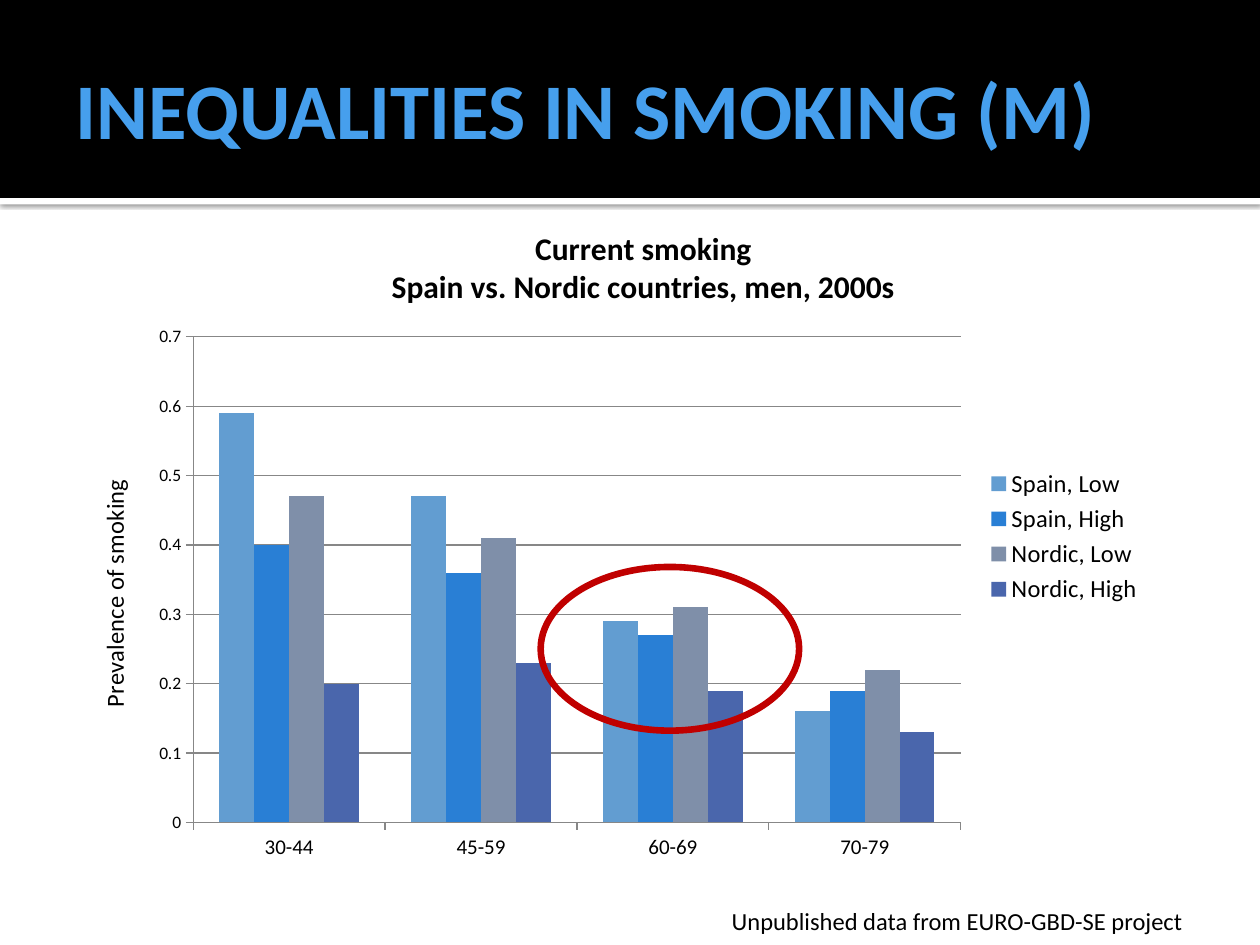
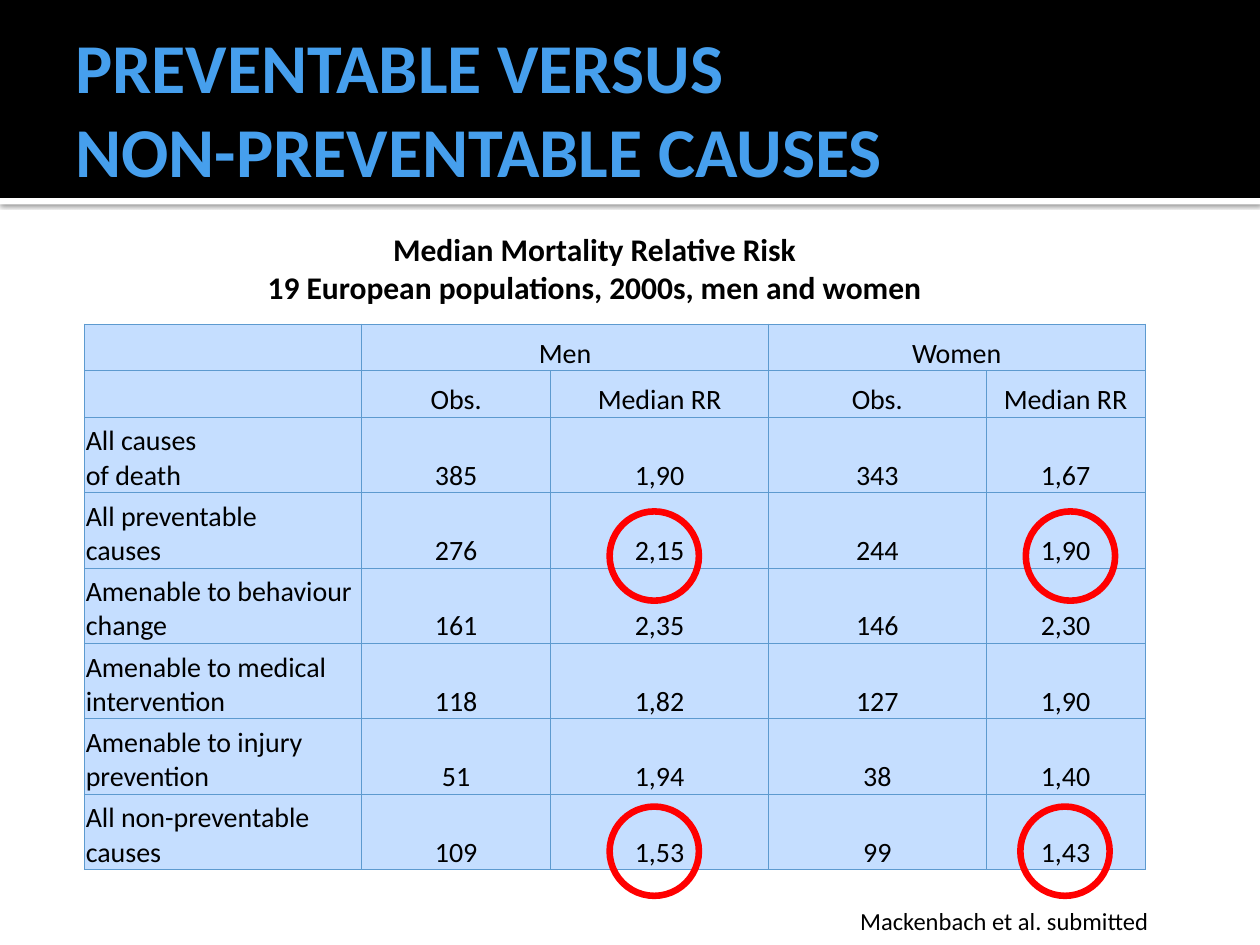
from dataclasses import dataclass

import pptx
import pptx.chart.data
import pptx.dml.color
import pptx.enum.chart
import pptx.enum.shapes
import pptx.enum.text
import pptx.oxml
import pptx.oxml.ns
import pptx.util
from lxml import etree

Cm = pptx.util.Cm
Pt = pptx.util.Pt
RGB = pptx.dml.color.RGBColor.from_string
ALIGN = pptx.enum.text.PP_ALIGN
ANCHOR = pptx.enum.text.MSO_ANCHOR
SHAPE = pptx.enum.shapes.MSO_SHAPE
CHART = pptx.enum.chart
qn = pptx.oxml.ns.qn
NS = pptx.oxml.ns.nsdecls


@dataclass(frozen=True)
class Theme:
    font: str = "Calibri"
    black: str = "000000"
    white: str = "FFFFFF"
    title: str = "469FED"
    grid: str = "878787"
    cell: str = "C5DEFF"
    border: str = "5D9ACF"
    dark_red: str = "C00000"
    red: str = "FF0000"
    heading_pt: int = 18
    table_pt: int = 16
    note_pt: int = 14
    category_pt: int = 12
    chart_pt: int = 10


@dataclass(frozen=True)
class Box:
    left: float
    top: float
    width: float
    height: float

    def emu(self) -> tuple:
        return Cm(self.left), Cm(self.top), Cm(self.width), Cm(self.height)


@dataclass(frozen=True)
class Label:
    text: str
    box: Box
    size: int
    color: str
    bold: bool = False
    align: ALIGN = ALIGN.LEFT
    anchor: ANCHOR = ANCHOR.TOP


@dataclass(frozen=True)
class Ring:
    box: Box
    color: str


@dataclass(frozen=True)
class Series:
    name: str
    values: tuple
    color: str


T = Theme()
TITLE_BOX = Box(1.27, 0.43, 22.86, 3.48)
BAND = Box(0, 0, 25.4, 3.99)
STRIP = Box(0, 3.99, 25.4, 0.13)

AGES = ("30-44", "45-59", "60-69", "70-79")
SMOKING = (
    Series("Spain, Low", (0.59, 0.47, 0.29, 0.16), "629DD1"),
    Series("Spain, High", (0.4, 0.36, 0.27, 0.19), "297FD5"),
    Series("Nordic, Low", (0.47, 0.41, 0.31, 0.22), "7F8FA9"),
    Series("Nordic, High", (0.2, 0.23, 0.19, 0.13), "4A66AC"),
)

COLUMNS = (5.59, 3.81, 4.39, 4.39, 3.2)
HEADER_ROWS = 2
HEADER_HEIGHT, BODY_HEIGHT = 0.94, 1.52
RISKS = (
    ("", "Men", "", "Women", ""),
    ("", "Obs.", "Median RR", "Obs.", "Median RR"),
    ("All causes\nof death", "385", "1,90", "343", "1,67"),
    ("All preventable\vcauses", "276", "2,15", "244", "1,90"),
    ("Amenable to behaviour change", "161", "2,35", "146", "2,30"),
    ("Amenable to medical intervention", "118", "1,82", "127", "1,90"),
    ("Amenable to injury prevention", "51", "1,94", "38", "1,40"),
    ("All non-preventable causes", "109", "1,53", "99", "1,43"),
)
RING_SIZE = 1.8
RING_SPOTS = ((12.29, 10.31), (12.29, 16.26), (20.68, 10.31), (20.57, 16.26))


def style_font(font, size: int, color: str = T.black, bold: bool = False) -> None:
    font.name = T.font
    font.size = Pt(size)
    font.bold = bold
    font.color.rgb = RGB(color)


def style_runs(tf, size: int, color: str = T.black, bold: bool = False,
               align: ALIGN = ALIGN.LEFT) -> None:
    for p in tf.paragraphs:
        p.alignment = align
        for r in p.runs:
            style_font(r.font, size, color, bold)


def add_label(s, label: Label) -> None:
    tf = s.shapes.add_textbox(*label.box.emu()).text_frame
    tf.word_wrap = True
    tf.vertical_anchor = label.anchor
    tf.text = label.text
    style_runs(tf, label.size, label.color, label.bold, label.align)


def add_bar(s, box: Box, color: str):
    sp = s.shapes.add_shape(SHAPE.RECTANGLE, *box.emu())
    sp.shadow.inherit = False
    sp.fill.solid()
    sp.fill.fore_color.rgb = RGB(color)
    sp.line.fill.background()
    return sp


def add_ring(s, ring: Ring) -> None:
    sp = s.shapes.add_shape(SHAPE.OVAL, *ring.box.emu())
    sp.shadow.inherit = False
    sp.fill.background()
    sp.line.color.rgb = RGB(ring.color)
    sp.line.width = Pt(3.78)


def add_slide(prs, title: str, size: int):
    s = prs.slides.add_slide(prs.slide_layouts[6])
    strip = add_bar(s, STRIP, T.white)
    effects = strip._element.spPr.find(qn("a:effectLst"))
    effects.append(pptx.oxml.parse_xml(
        f'<a:outerShdw {NS("a")} blurRad="{Pt(2.5)}" dist="{Pt(0.8)}" dir="5400000" '
        f'algn="tl" rotWithShape="0"><a:srgbClr val="{T.black}">'
        '<a:alpha val="60000"/></a:srgbClr></a:outerShdw>'))
    add_bar(s, BAND, T.black)
    add_label(s, Label(title, TITLE_BOX, size, T.title, True, anchor=ANCHOR.MIDDLE))
    return s


def place(element, inner: bool = False, **fractions: float) -> None:
    for old in element.findall(qn("c:layout")):
        element.remove(old)
    layout = etree.Element(qn("c:layout"))
    manual = etree.SubElement(layout, qn("c:manualLayout"))
    if inner:
        etree.SubElement(manual, qn("c:layoutTarget")).set("val", "inner")
    for key in ("x", "y"):
        etree.SubElement(manual, qn(f"c:{key}Mode")).set("val", "edge")
    for key, value in fractions.items():
        etree.SubElement(manual, qn(f"c:{key}")).set("val", str(value))
    text = element.find(qn("c:tx"))
    element.insert(0 if text is None else element.index(text) + 1, layout)


def add_smoking_chart(s, box: Box) -> None:
    data = pptx.chart.data.CategoryChartData()
    data.categories = AGES
    for series in SMOKING:
        data.add_series(series.name, series.values)
    chart = s.shapes.add_chart(
        CHART.XL_CHART_TYPE.COLUMN_CLUSTERED, *box.emu(), data).chart
    style_font(chart.font, T.chart_pt)

    tf = chart.chart_title.text_frame
    tf.text = "Current smoking\nSpain vs. Nordic countries, men, 2000s"
    style_runs(tf, T.heading_pt, bold=True, align=ALIGN.CENTER)
    chart.chart_title.include_in_layout = False
    place(chart.chart_title._element, x=0.29, y=0.03)

    plot = chart.plots[0]
    plot.gap_width = 150
    plot.overlap = 0
    plot.vary_by_categories = False
    for drawn, series in zip(plot.series, SMOKING):
        drawn.format.fill.solid()
        drawn.format.fill.fore_color.rgb = RGB(series.color)
    place(chart._chartSpace.chart.plotArea, True, x=0.11, y=0.2, w=0.71, h=0.73)

    ages, prevalence = chart.category_axis, chart.value_axis
    for axis, size in ((ages, T.category_pt), (prevalence, T.chart_pt)):
        style_font(axis.tick_labels.font, size)
        axis.major_tick_mark = CHART.XL_TICK_MARK.OUTSIDE
        axis.format.line.color.rgb = RGB(T.grid)
        axis.format.line.width = Pt(0.75)
    prevalence.minimum_scale, prevalence.maximum_scale = 0, 0.7
    prevalence.major_unit = 0.1
    prevalence.major_gridlines.format.line.color.rgb = RGB(T.grid)
    prevalence.major_gridlines.format.line.width = Pt(0.75)
    tf = prevalence.axis_title.text_frame
    tf.text = "Prevalence of smoking"
    style_runs(tf, T.note_pt, align=ALIGN.CENTER)

    chart.has_legend = True
    chart.legend.position = CHART.XL_LEGEND_POSITION.RIGHT
    chart.legend.include_in_layout = False
    style_font(chart.legend.font, T.note_pt)


def style_cell(cell, align: ALIGN) -> None:
    cell.margin_left = cell.margin_right = cell.margin_top = Cm(0.03)
    cell.margin_bottom = 0
    cell.vertical_anchor = ANCHOR.BOTTOM
    cell.fill.solid()
    cell.fill.fore_color.rgb = RGB(T.cell)
    style_runs(cell.text_frame, T.table_pt, align=align)
    tcPr = cell._tc.get_or_add_tcPr()
    for i, side in enumerate("LRTB"):
        tcPr.insert(i, pptx.oxml.parse_xml(
            f'<a:ln{side} {NS("a")} w="{Pt(0.5)}"><a:solidFill>'
            f'<a:srgbClr val="{T.border}"/></a:solidFill></a:ln{side}>'))


def add_risk_table(s, left: float, top: float) -> None:
    heights = [HEADER_HEIGHT if i < HEADER_ROWS else BODY_HEIGHT
               for i in range(len(RISKS))]
    box = Box(left, top, sum(COLUMNS), sum(heights))
    table = s.shapes.add_table(len(RISKS), len(COLUMNS), *box.emu()).table
    for column, width in zip(table.columns, COLUMNS):
        column.width = Cm(width)
    for row, height, texts in zip(table.rows, heights, RISKS):
        row.height = Cm(height)
        for i, (cell, text) in enumerate(zip(row.cells, texts)):
            cell.text_frame.text = text
            style_cell(cell, ALIGN.CENTER if i else ALIGN.LEFT)
    for first in (1, 3):
        table.cell(0, first).merge(table.cell(0, first + 1))


def build_smoking(prs) -> None:
    s = add_slide(prs, "INEQUALITIES IN SMOKING (M)", 45)
    add_smoking_chart(s, Box(1.5, 4.11, 21.79, 13.41))
    add_label(s, Label("Unpublished data from EURO-GBD-SE project",
                       Box(14.5, 18.14, 9.6, 0.86), T.note_pt, T.black))
    add_ring(s, Ring(Box(10.9, 11.43, 5.21, 3.3), T.dark_red))


def build_causes(prs) -> None:
    s = add_slide(prs, "PREVENTABLE VERSUS\vNON-PREVENTABLE CAUSES", 40)
    add_risk_table(s, 1.7, 6.53)
    add_label(s, Label(
        "Median Mortality Relative Risk\v19 European populations, 2000s, men and women",
        Box(4.09, 4.52, 15.8, 1.8), T.heading_pt, T.black, True, ALIGN.CENTER))
    add_label(s, Label("Mackenbach et al. submitted",
                       Box(17.09, 18.14, 7.59, 0.86), T.note_pt, T.black))
    for left, top in RING_SPOTS:
        add_ring(s, Ring(Box(left, top, RING_SIZE, RING_SIZE), T.red))


def main() -> None:
    prs = pptx.Presentation()
    prs.slide_width, prs.slide_height = Cm(25.4), Cm(19.05)
    build_smoking(prs)
    build_causes(prs)
    prs.save("out.pptx")


if __name__ == "__main__":
    main()
